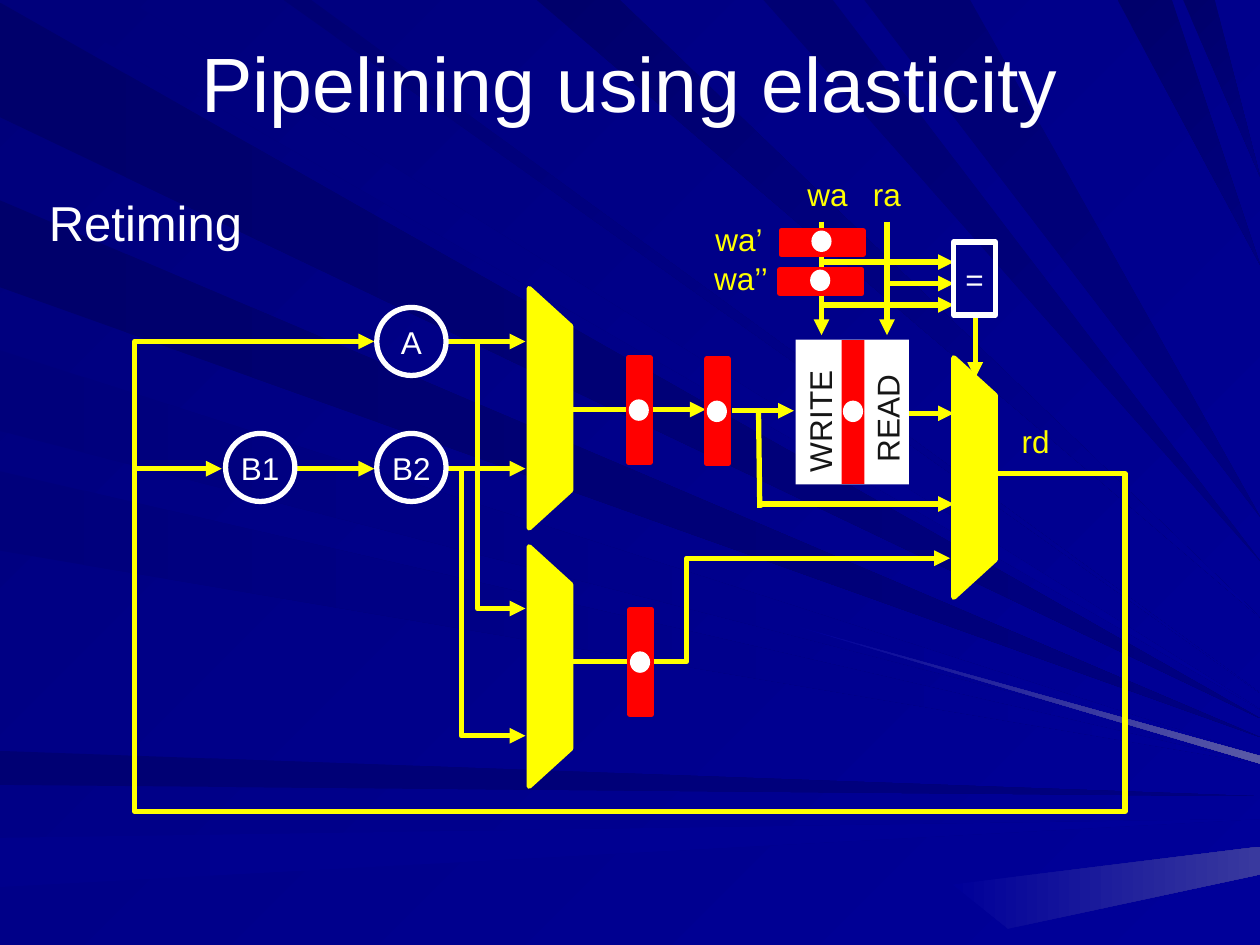
from lxml.etree import SubElement
from pptx import Presentation
from pptx.dml.color import RGBColor
from pptx.enum.shapes import MSO_CONNECTOR, MSO_SHAPE
from pptx.enum.text import MSO_ANCHOR, PP_ALIGN
from pptx.oxml.ns import qn
from pptx.util import Inches, Pt

INK = {"white": "FFFFFF", "wire": "FFFF00", "reg": "FF0000", "dark": "161616",
       "dusk": "00006B", "night": "000073", "deep": "00007B", "navy": "000080",
       "pale": "00008C", "blue": "000099", "mist": "5A5AA6", "glow": "39399E"}

RAYS = [
    ("left", "dusk", "navy", 0.02, 0.93, 5.7),
    ("top", "deep", "blue", 0.26, 1.01, 5.63),
    ("left", "night", "navy", 5.96, 6.23, 6.32),
    ("left", "pale", "blue", 6.65, 7.04, 6.5),
    ("left", "dusk", "navy", 1.59, 2.28, 5.85),
    ("top", "dusk", "blue", 4.26, 4.92, 4.9),
    ("top", "night", "navy", 6.06, 6.61, 4.45),
    ("top", "dusk", "navy", 8.87, 9.3, 2.1),
    ("top", "dusk", "navy", 9.39, 9.64, 1.4),
    ("left", "deep", "blue", 2.78, 3.42, 6),
    ("left", "deep", "blue", 3.74, 4.37, 6.06),
    ("top", "night", "blue", 2.25, 2.47, 5.5),
    ("top", "night", "navy", 6.86, 7.7, 4.1),
]
BEAMS = [
    ("mist", [(6.35, 4.98), (10, 6), (10, 6.06)]),
    ("glow", [(7.56, 7.02), (10, 6.72), (10, 6.94), (8, 7.37)]),
]
WIRES = [
    [(3.79, 2.7), (3.79, 4.83), (4.17, 4.83)],
    [(3.66, 3.71), (3.66, 5.84), (4.17, 5.84)],
    [(4.54, 5.25), (5.45, 5.25), (5.45, 4.43), (7.54, 4.43)],
    [(7.9, 3.76), (8.93, 3.76), (8.93, 6.44), (1.07, 6.44), (1.07, 2.71), (2.97, 2.71)],
]
ACROSS = [
    (2.71, 3.55, 4.17), (3.72, 3.55, 4.17), (3.72, 2.35, 2.97), (3.72, 1.07, 1.76),
    (3.25, 4.55, 5.6), (3.26, 5.81, 6.3), (3.28, 6.65, 7.57), (4, 6.04, 7.57),
    (2.08, 6.52, 7.57), (2.25, 7.06, 7.57), (2.42, 6.52, 7.57),
]
DOWN = [(6.52, 1.76, 2.66), (7.04, 1.76, 2.66), (7.74, 2.5, 3)]
LABELS = [
    ("rd", 8.01, 3.3, 0.45), ("wa", 6.31, 1.34, 0.56), ("ra", 6.83, 1.34, 0.45),
    ("wa’", 5.58, 1.7, 0.62), ("wa’’", 5.57, 2.01, 0.68),
]


def tint(name):
    return RGBColor.from_string(INK[name])


def blend(fill, start, end, angle):
    fill.gradient()
    fill.gradient_angle = 360 - angle
    for stop, name, place in zip(fill.gradient_stops, (start, end), (0, 1)):
        stop.color.rgb = tint(name)
        stop.position = place


def paint(shape, fill=None, line=None):
    shape.shadow.inherit = False
    if fill:
        shape.fill.solid()
        shape.fill.fore_color.rgb = tint(fill)
    else:
        shape.fill.background()
    if line:
        stroke(shape, line)
    else:
        shape.line.fill.background()


def stroke(shape, name):
    shape.line.color.rgb = tint(name)
    shape.line.width = Pt(3)


def point(shape):
    ln = shape._element.spPr.find(qn("a:ln"))
    SubElement(ln, qn("a:tailEnd"), type="triangle")


def write(frame, text, size, name, align=PP_ALIGN.LEFT):
    para = frame.paragraphs[0]
    para.alignment = align
    run = para.add_run()
    run.text = text
    run.font.name = "Arial"
    run.font.size = Pt(size)
    run.font.color.rgb = tint(name)


def trace(slide, dots, close=True):
    (x, y), *rest = [(Inches(a), Inches(b)) for a, b in dots]
    pen = slide.shapes.build_freeform(x, y)
    pen.add_line_segments(rest, close=close)
    return pen.convert_to_shape()


def add_ray(slide, edge, start, end, near, far, tip):
    base = [(near, 0), (far, 0)] if edge == "top" else [(0, near), (0, far)]
    ray = trace(slide, base + [(10, tip)])
    paint(ray, start)
    blend(ray.fill, start, end, 45 if edge == "top" else 0)


def add_beam(slide, end, dots):
    beam = trace(slide, dots)
    paint(beam, end)
    blend(beam.fill, "blue", end, 0)


def add_wire(slide, dots):
    wire = trace(slide, dots, False)
    paint(wire, line="wire")
    point(wire)


def add_line(slide, x1, y1, x2, y2, head=True):
    ends = [Inches(v) for v in (x1, y1, x2, y2)]
    line = slide.shapes.add_connector(MSO_CONNECTOR.STRAIGHT, *ends)
    stroke(line, "wire")
    SubElement(line._element.spPr, qn("a:effectLst"))
    if head:
        point(line)


def add_mux(slide, x, y):
    right = x + 0.33
    mux = trace(slide, [(x, y + 1.9), (right, y + 1.6), (right, y + 0.3), (x, y)])
    paint(mux, "wire", "wire")


def add_box(slide, kind, x, y, w, h, fill=None, line=None, turn=0):
    box = slide.shapes.add_shape(kind, Inches(x), Inches(y), Inches(w), Inches(h))
    paint(box, fill, line)
    box.rotation = turn
    return box


def add_node(slide, kind, text, x, y, w, h):
    frame = add_box(slide, kind, x, y, w, h, line="white").text_frame
    frame.word_wrap = False
    frame.vertical_anchor = MSO_ANCHOR.MIDDLE
    write(frame, text, 18, "white", PP_ALIGN.CENTER)


def add_dot(slide, x, y):
    add_box(slide, MSO_SHAPE.OVAL, x, y, 0.16, 0.17, "white")


def add_label(slide, text, x, y, w, h=0.43, size=18, name="wire", turn=0):
    label = slide.shapes.add_textbox(Inches(x), Inches(y), Inches(w), Inches(h))
    label.rotation = turn
    label.text_frame.word_wrap = True
    write(label.text_frame, text, size, name)


def add_title(slide, text):
    title = slide.shapes.title
    title.left, title.top = Inches(0.5), Inches(0.02)
    title.width, title.height = Inches(9), Inches(1.25)
    title.text_frame.vertical_anchor = MSO_ANCHOR.MIDDLE
    write(title.text_frame, text, 44, "white", PP_ALIGN.CENTER)
    slide.shapes._spTree.append(title._element)


def main():
    deck = Presentation()
    deck.slide_width, deck.slide_height = Inches(10), Inches(7.5)
    slide = deck.slides.add_slide(deck.slide_layouts[5])
    blend(slide.background.fill, "deep", "blue", 45)
    for ray in RAYS:
        add_ray(slide, *ray)
    for beam in BEAMS:
        add_beam(slide, *beam)
    add_title(slide, "Pipelining using elasticity")
    for dots in WIRES:
        add_wire(slide, dots)
    for y, start, end in ACROSS:
        add_line(slide, start, y, end, y)
    for x, start, end in DOWN:
        add_line(slide, x, start, x, end)
    add_line(slide, 6.02, 3.24, 6.03, 4.03, False)
    for x, y in [(4.2, 2.29), (4.2, 4.34), (7.57, 2.84)]:
        add_mux(slide, x, y)
    for text, x, y in [("A", 2.99, 2.44), ("B2", 2.99, 3.44), ("B1", 1.79, 3.44)]:
        add_node(slide, MSO_SHAPE.OVAL, text, x, y, 0.55, 0.54)
    add_node(slide, MSO_SHAPE.RECTANGLE, "=", 7.57, 1.92, 0.33, 0.58)
    add_box(slide, MSO_SHAPE.RECTANGLE, 6.19, 2.82, 1.15, 0.9, "white", turn=270)
    add_box(slide, MSO_SHAPE.RECTANGLE, 6.2, 3.18, 1.14, 0.18, "reg", turn=270)
    add_dot(slide, 6.69, 3.18)
    for x, y in [(4.99, 2.84), (5.61, 2.85), (5, 4.84)]:
        add_box(slide, MSO_SHAPE.RECTANGLE, x, y, 0.17, 0.83, "reg", "reg")
        add_dot(slide, x, y + 0.33)
    for x, y in [(6.43, 1.6), (6.42, 1.91)]:
        add_box(slide, MSO_SHAPE.RECTANGLE, x, y, 0.19, 0.65, "reg", "reg", 270)
        add_dot(slide, x + 0.01, y + 0.23)
    add_label(slide, "Retiming", 0.29, 1.48, 1.87, 0.69, 28, "white")
    for label in LABELS:
        add_label(slide, *label)
    add_label(slide, "READ", 6.56, 3.06, 0.99, name="dark", turn=270)
    add_label(slide, "WRITE", 5.97, 3.08, 1.1, name="dark", turn=270)
    deck.save("out.pptx")


if __name__ == "__main__":
    main()
